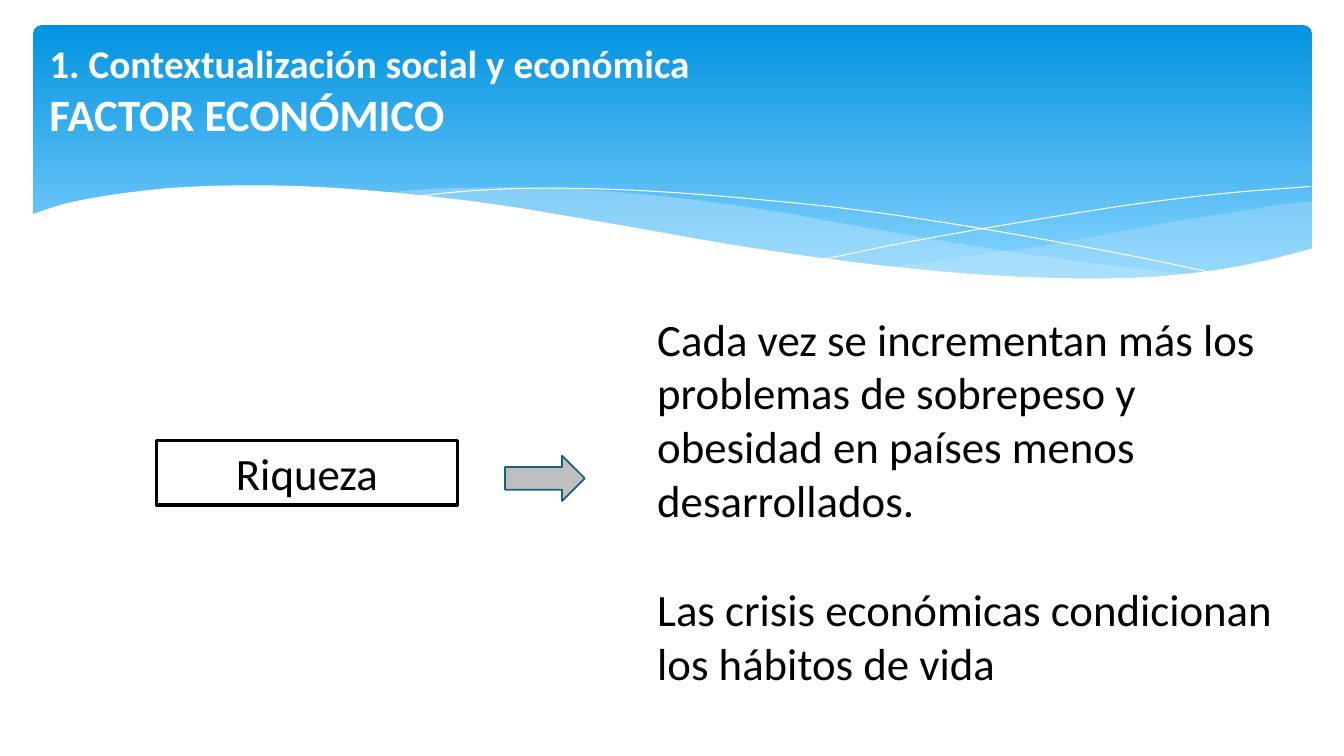
"""Build the slide on the economic factor, with its wave banner."""
from dataclasses import dataclass
from typing import Optional

from lxml import etree
from pptx import Presentation, util as u
from pptx.dml.color import RGBColor
from pptx.enum import dml, shapes, text
from pptx.oxml import ns

EMU_PER_PX = 9144
CURVE_STEPS = 6
FONT = "Calibri"
COLORS = {
    "white": "FFFFFF", "black": "000000", "sky_top": "0293E0", "sky_bottom": "83D3FE",
    "mist": "C6E7FC", "arrow": "BFBFBF", "arrow_edge": "195F84",
}
Point = tuple[float, float]


@dataclass(frozen=True)
class Box:
    left: int
    top: int
    width: int
    height: int

    def emu(self) -> tuple[int, ...]:
        return tuple(px(value) for value in (self.left, self.top, self.width, self.height))


@dataclass(frozen=True)
class Wave:
    edges: list[list[Point]]
    fill: Optional[str] = None
    opacity: int = 100


@dataclass(frozen=True)
class Statement:
    box: Box
    wording: str


WAVES = [
    Wave([[(1300, 200), (1264, 204), (1208, 213), (1147, 223), (1038, 243), (941, 257),
           (882, 265)],
          [(882, 265), (958, 273), (1025, 277), (1085, 278), (1138, 276), (1185, 272),
           (1228, 265), (1266, 257), (1301, 247)],
          [(1301, 247), (1301, 200)]], "mist", 29),
    Wave([[(1190, 273), (1116, 265), (1033, 254), (941, 240), (838, 222), (758, 208),
           (686, 198), (619, 191), (560, 187), (506, 186), (437, 187), (382, 191)],
          [(382, 191), (456, 199), (539, 211), (599, 222), (706, 240), (802, 255),
           (887, 266), (963, 274), (1030, 278), (1090, 278), (1143, 277), (1190, 273)]],
         "mist", 40),
    Wave([[(412, 195), (458, 190), (516, 187), (577, 187), (652, 190), (742, 197),
           (848, 208), (969, 226), (1108, 251), (1210, 272)]]),
    Wave([[(818, 257), (896, 241), (997, 223), (1115, 204), (1213, 192), (1300, 185)]]),
    Wave([[(1303, 246), (1253, 259), (1198, 269), (1134, 275), (1058, 276), (968, 272),
           (863, 262), (740, 245), (596, 220), (486, 202), (390, 191), (306, 185),
           (235, 184), (176, 186), (127, 191), (89, 197), (61, 203), (31, 213)],
          [(31, 213), (31, 329), (31, 329)],
          [(31, 329), (1303, 329)],
          [(1303, 329), (1303, 246)]], "white"),
]
STATEMENTS = [
    Statement(Box(642, 304, 654, 226),
              "Cada vez se incrementan más los problemas de sobrepeso y obesidad "
              "en países menos desarrollados."),
    Statement(Box(642, 572, 654, 118), "Las crisis económicas condicionan los hábitos de vida"),
]


def px(value: float) -> int:
    return round(value * EMU_PER_PX)


def rgb(name: str) -> RGBColor:
    return RGBColor.from_string(COLORS[name])


def paint(shape, fill: Optional[str], line: Optional[str] = None, width: float = 0) -> None:
    shape.shadow.inherit = False
    if fill:
        shape.fill.solid()
        shape.fill.fore_color.rgb = rgb(fill)
    else:
        shape.fill.background()
    if line:
        shape.line.color.rgb = rgb(line)
        shape.line.width = u.Pt(width)
    else:
        shape.line.fill.background()


def format_run(run, size: int, color: str, bold: bool = False) -> None:
    run.font.name = FONT
    run.font.size = u.Pt(size)
    run.font.bold = bold
    run.font.color.rgb = rgb(color)


def smooth(knots: list[Point]) -> list[Point]:
    """Return points on the Catmull-Rom curve through the knots."""
    if len(knots) < 4:
        return knots
    padded = [knots[0], *knots, knots[-1]]
    points = [knots[0]]
    for before, start, end, after in zip(padded, padded[1:], padded[2:], padded[3:]):
        for step in range(1, CURVE_STEPS + 1):
            t = step / CURVE_STEPS
            points.append(tuple(
                (2 * b + (c - a) * t + (2 * a - 5 * b + 4 * c - d) * t ** 2
                 + (3 * b - a - 3 * c + d) * t ** 3) / 2
                for a, b, c, d in zip(before, start, end, after)))
    return points


def add_banner(slide) -> None:
    banner = slide.shapes.add_shape(
        shapes.MSO_SHAPE.ROUNDED_RECTANGLE, *Box(33, 25, 1268, 270).emu())
    banner.adjustments[0] = 0.03
    paint(banner, None)
    banner.fill.gradient()
    banner.fill.gradient_angle = 270
    for stop, position, color in zip(banner.fill.gradient_stops, (0, 0.9),
                                     ("sky_top", "sky_bottom")):
        stop.position = position
        stop.color.rgb = rgb(color)


def add_wave(slide, wave: Wave) -> None:
    points = [(px(x), px(y)) for edge in wave.edges for x, y in smooth(edge)]
    builder = slide.shapes.build_freeform(*points[0], scale=1.0)
    builder.add_line_segments(points[1:], close=wave.fill is not None)
    shape = builder.convert_to_shape()
    paint(shape, wave.fill, None if wave.fill else "white")
    if wave.opacity < 100:
        color = shape.fill._xPr.find(ns.qn("a:solidFill"))[0]
        etree.SubElement(color, ns.qn("a:alpha"), val=str(wave.opacity * 1000))


def place_title(slide) -> None:
    title = slide.shapes.title
    title.left, title.top, title.width, title.height = Box(37, 21, 992, 137).emu()
    frame = title.text_frame
    frame.text = "1. Contextualización social y económica\vFACTOR ECONÓMICO"
    frame.word_wrap = True
    frame.auto_size = text.MSO_AUTO_SIZE.NONE
    frame.vertical_anchor = text.MSO_ANCHOR.MIDDLE
    frame.margin_left = frame.margin_right = px(12)
    frame.margin_top = frame.margin_bottom = px(6)
    paragraph = frame.paragraphs[0]
    paragraph.alignment = text.PP_ALIGN.LEFT
    for run, size in zip(paragraph.runs, (28, 32)):
        format_run(run, size, "white", bold=True)
    title.element.getparent().append(title.element)


def write(shape, wording: str, alignment: text.PP_ALIGN) -> None:
    frame = shape.text_frame
    frame.text = wording
    frame.word_wrap = True
    frame.auto_size = text.MSO_AUTO_SIZE.SHAPE_TO_FIT_TEXT
    frame.vertical_anchor = text.MSO_ANCHOR.TOP
    frame.paragraphs[0].alignment = alignment
    format_run(frame.paragraphs[0].runs[0], 32, "black")


def main() -> None:
    presentation = Presentation()
    presentation.slide_width, presentation.slide_height = px(1333), px(750)
    slide = presentation.slides.add_slide(presentation.slide_layouts[5])
    add_banner(slide)
    for wave in WAVES:
        add_wave(slide, wave)
    place_title(slide)
    wealth = slide.shapes.add_shape(
        shapes.MSO_SHAPE.RECTANGLE, *Box(155, 437, 299, 64).emu())
    paint(wealth, None, "black", 2.25)
    write(wealth, "Riqueza", text.PP_ALIGN.CENTER)
    arrow = slide.shapes.add_shape(
        shapes.MSO_SHAPE.RIGHT_ARROW, *Box(501, 452, 79, 45).emu())
    paint(arrow, "arrow", "arrow_edge", 1.25)
    for statement in STATEMENTS:
        textbox = slide.shapes.add_textbox(*statement.box.emu())
        write(textbox, statement.wording, text.PP_ALIGN.LEFT)
    presentation.save("out.pptx")


if __name__ == "__main__":
    main()
